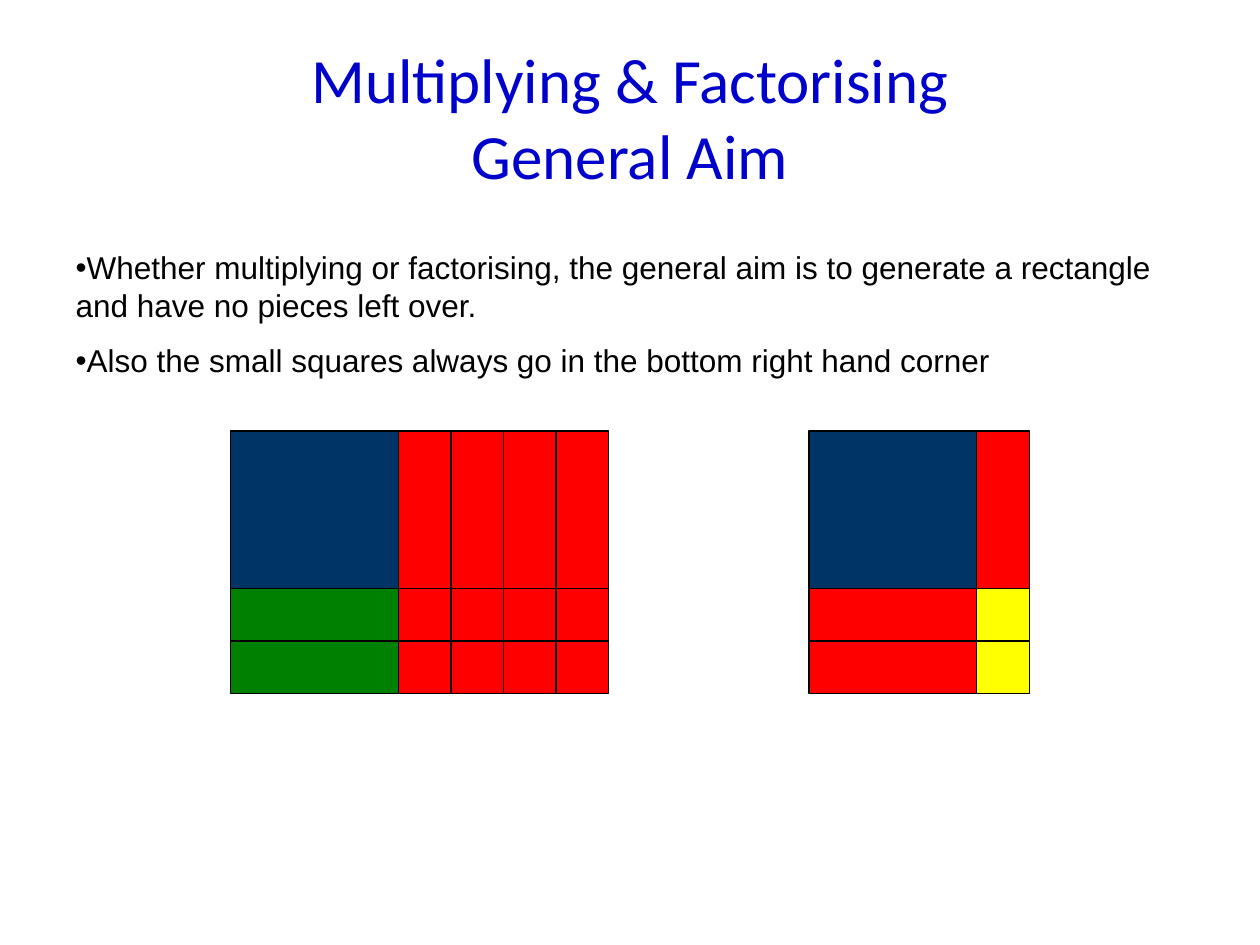
import pptx
import pptx.dml.color
import pptx.enum.shapes
import pptx.enum.text
import pptx.util
from pptx.util import Inches, Pt

TITLE = "Multiplying & Factorising\vGeneral Aim"
AIMS = [
    "Whether multiplying or factorising, the general aim is to generate "
    "a rectangle and have no pieces left over.",
    "Also the small squares always go in the bottom right hand corner",
]
NAVY, RED, GREEN, YELLOW, BLACK = "003366", "FF0000", "008000", "FFFF00", "000000"
UNIT = 5 / 12
LONG_WIDTH, LONG_HEIGHT = 4 / 3, 1.25
TILES_TOP = 3.42


def color(hex_text):
    return pptx.dml.color.RGBColor.from_string(hex_text)


def place(shape, left, top, width, height):
    shape.left, shape.top = Inches(left), Inches(top)
    shape.width, shape.height = Inches(width), Inches(height)


def style_font(para, name, size, hex_text):
    para.font.name = name
    para.font.size = Pt(size)
    para.font.color.rgb = color(hex_text)


def fill_title(title):
    place(title, 0.5, 0.3, 9, 1.25)
    title.text_frame.text = TITLE
    style_font(title.text_frame.paragraphs[0], "Calibri", 36, "0000CC")


def fill_aims(body):
    place(body, 0.5, 1.92, 9.17, 1.15)
    frame = body.text_frame
    frame.auto_size = pptx.enum.text.MSO_AUTO_SIZE.NONE
    frame.text = "\n".join(AIMS)
    for para in frame.paragraphs:
        style_font(para, "Arial", 18, BLACK)
        para.space_before = Pt(10)
        properties = para._p.get_or_add_pPr()
        properties.set("marL", "0")
        properties.set("indent", "0")


def add_tile(page, left, top, width, height, fill):
    tile = page.shapes.add_shape(
        pptx.enum.shapes.MSO_SHAPE.RECTANGLE,
        Inches(left), Inches(top), Inches(width), Inches(height))
    tile.shadow.inherit = False
    tile.fill.solid()
    tile.fill.fore_color.rgb = color(fill)
    tile.line.color.rgb = color(BLACK)
    tile.line.width = Pt(0.75)


def add_rectangle_model(page, left, columns, rows, row_fill, corner_fill):
    """Large square with unit columns to its right and unit rows below."""
    widths = [LONG_WIDTH] + [UNIT] * columns
    heights = [LONG_HEIGHT] + [UNIT] * rows
    for row, height in enumerate(heights):
        for column, width in enumerate(widths):
            if row and column:
                fill = corner_fill
            elif row:
                fill = row_fill
            else:
                fill = RED if column else NAVY
            add_tile(page, left + sum(widths[:column]),
                     TILES_TOP + sum(heights[:row]), width, height, fill)


def main():
    deck = pptx.Presentation()
    deck.slide_width, deck.slide_height = Inches(10), Inches(7.5)
    page = deck.slides.add_slide(deck.slide_layouts[1])
    fill_title(page.shapes.title)
    fill_aims(page.placeholders[1])
    add_rectangle_model(page, 1.83, columns=4, rows=2, row_fill=GREEN, corner_fill=RED)
    add_rectangle_model(page, 6.42, columns=1, rows=2, row_fill=RED, corner_fill=YELLOW)
    deck.save("out.pptx")


if __name__ == "__main__":
    main()
